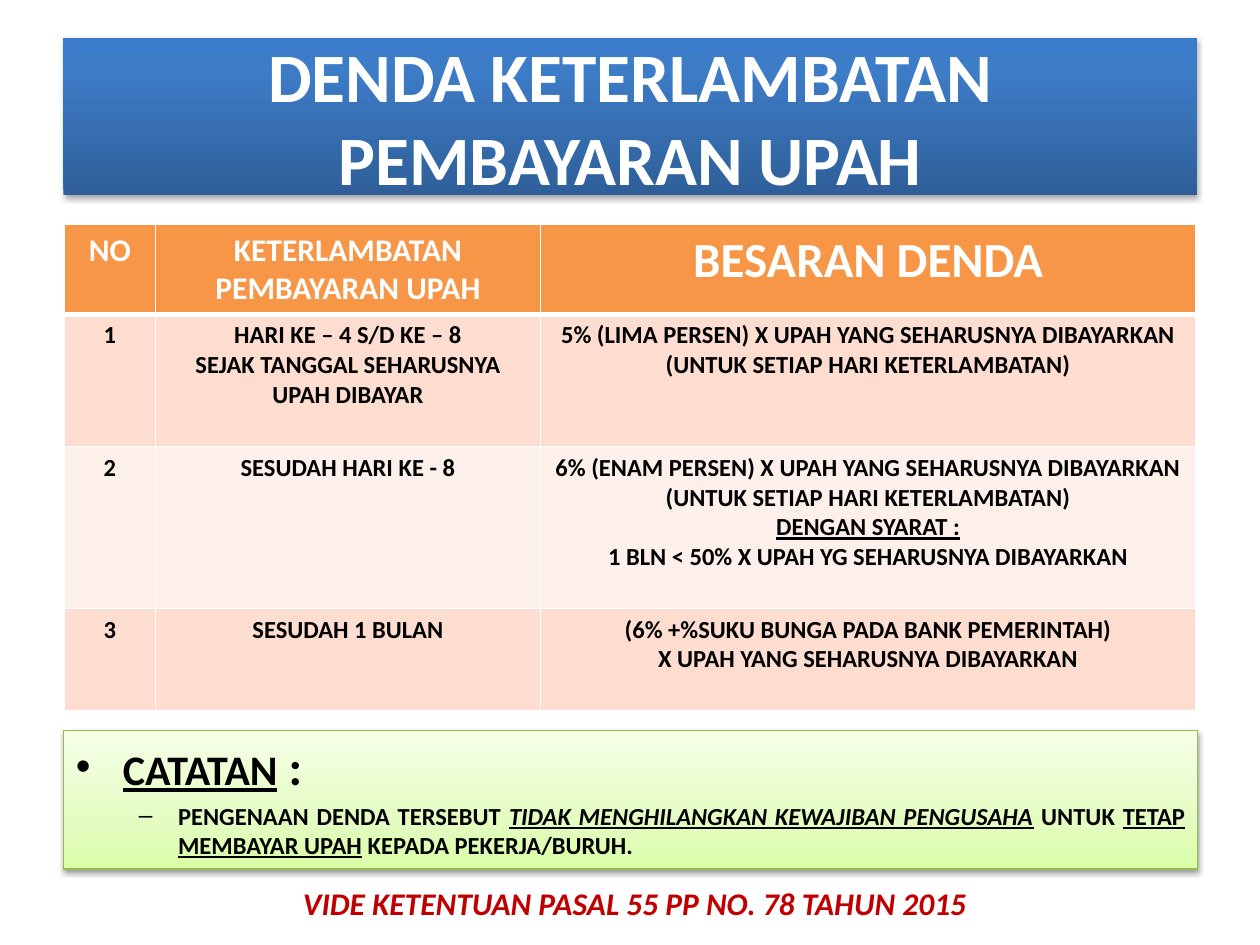
from lxml import etree
from pptx import Presentation
from pptx.dml.color import RGBColor
from pptx.enum.shapes import MSO_SHAPE
from pptx.enum.text import MSO_ANCHOR, PP_ALIGN
from pptx.oxml.ns import qn
from pptx.util import Cm, Pt

RECTANGLE = MSO_SHAPE.RECTANGLE
TOP, MIDDLE = MSO_ANCHOR.TOP, MSO_ANCHOR.MIDDLE
CENTER, JUSTIFY = PP_ALIGN.CENTER, PP_ALIGN.JUSTIFY

WHITE = RGBColor(0xFF, 0xFF, 0xFF)
BLACK = RGBColor(0x00, 0x00, 0x00)
RED = RGBColor(0xC0, 0x00, 0x00)
ORANGE = RGBColor(0xF7, 0x96, 0x46)
PEACH = RGBColor(0xFC, 0xDD, 0xCF)
PALE_PEACH = RGBColor(0xFD, 0xEF, 0xE9)
GREEN = RGBColor(0x98, 0xB9, 0x55)
TITLE_STOPS = [(0, RGBColor(0x2F, 0x5F, 0x99)), (80, RGBColor(0x3D, 0x7C, 0xC7)),
               (100, RGBColor(0x3A, 0x7C, 0xCB))]
NOTE_STOPS = [(0, RGBColor(0xDA, 0xFD, 0xA7)), (35, RGBColor(0xE4, 0xFC, 0xC2)),
              (100, RGBColor(0xF5, 0xFF, 0xE7))]


def add_run(paragraph, text, size, color, underline=False, italic=False):
    run = paragraph.add_run()
    run.text = text
    font = run.font
    font.name, font.size, font.bold = "Calibri", Pt(size), True
    font.color.rgb = color
    font.underline, font.italic = underline, italic


def add_panel(top, height, stops, opacity):
    """Rectangle with a bottom-to-top gradient and a soft shadow below."""
    shape = slide.shapes.add_shape(RECTANGLE, Cm(1.28), Cm(top), Cm(22.86), Cm(height))
    shape.fill.gradient()
    shape.fill.gradient_angle = 90
    properties = shape.element.spPr
    stop_list = properties.find(qn("a:gradFill")).find(qn("a:gsLst"))
    for old_stop in list(stop_list):
        stop_list.remove(old_stop)
    for position, color in stops:
        stop = etree.SubElement(stop_list, qn("a:gs"), pos=str(position * 1000))
        etree.SubElement(stop, qn("a:srgbClr"), val=str(color))
    shape.line.fill.background()
    shape.shadow.inherit = False
    shadow = etree.SubElement(properties.find(qn("a:effectLst")), qn("a:outerShdw"),
                              blurRad=str(Pt(3.1)), dist=str(Pt(1.7)),
                              dir="5400000", rotWithShape="0")
    shadow_color = etree.SubElement(shadow, qn("a:srgbClr"), val=str(BLACK))
    etree.SubElement(shadow_color, qn("a:alpha"), val=str(opacity * 1000))
    return shape


presentation = Presentation()
presentation.slide_width, presentation.slide_height = Cm(25.4), Cm(19.05)
slide = presentation.slides.add_slide(presentation.slide_layouts[6])

# Title
title = add_panel(0.76, 3.18, TITLE_STOPS, 35)
title.text_frame.vertical_anchor = MIDDLE
paragraph = title.text_frame.paragraphs[0]
paragraph.alignment = CENTER
add_run(paragraph, "DENDA KETERLAMBATAN PEMBAYARAN UPAH", 39.6, WHITE)

# Table of penalties: each cell is a list of paragraphs
PER_DAY = "(UNTUK SETIAP HARI KETERLAMBATAN)"
CONDITION = "DENGAN SYARAT :"
rows = [
    [["NO"], ["KETERLAMBATAN PEMBAYARAN UPAH"], ["BESARAN DENDA"]],
    [["1"], ["HARI KE – 4 S/D KE – 8", "SEJAK TANGGAL SEHARUSNYA UPAH DIBAYAR"],
     ["5% (LIMA PERSEN) X UPAH YANG SEHARUSNYA DIBAYARKAN", PER_DAY]],
    [["2"], ["SESUDAH HARI KE - 8"],
     ["6% (ENAM PERSEN) X UPAH YANG SEHARUSNYA DIBAYARKAN", PER_DAY, CONDITION,
      "1 BLN < 50% X UPAH YG SEHARUSNYA DIBAYARKAN"]],
    [["3"], ["SESUDAH 1 BULAN"],
     ["(6% +%SUKU BUNGA PADA BANK PEMERINTAH)", "X UPAH YANG SEHARUSNYA DIBAYARKAN"]],
]
column_widths = [1.83, 7.77, 13.2]
row_heights = [1.78, 2.67, 3.26, 2.06]
row_fills = [ORANGE, PEACH, PALE_PEACH, PEACH]
table = slide.shapes.add_table(4, 3, Cm(1.3), Cm(4.53), Cm(sum(column_widths)),
                               Cm(sum(row_heights))).table
table.horz_banding = False
for column, width in zip(table.columns, column_widths):
    column.width = Cm(width)
for row_index, row in enumerate(rows):
    table.rows[row_index].height = Cm(row_heights[row_index])
    border_widths = {"a:lnL": 1, "a:lnR": 1, "a:lnT": 3 if row_index == 1 else 1,
                     "a:lnB": 3 if row_index == 0 else 1}
    for column_index, lines in enumerate(row):
        cell = table.cell(row_index, column_index)
        cell_properties = cell._tc.get_or_add_tcPr()
        for side, width in border_widths.items():
            border = etree.SubElement(cell_properties, qn(side), w=str(Pt(width)))
            border_fill = etree.SubElement(border, qn("a:solidFill"))
            etree.SubElement(border_fill, qn("a:srgbClr"), val=str(WHITE))
        cell.fill.solid()
        cell.fill.fore_color.rgb = row_fills[row_index]
        size, color = 14, BLACK
        if row_index == 0:
            size, color = (28 if column_index == 2 else 18), WHITE
        text_frame = cell.text_frame
        for line_index, line in enumerate(lines):
            paragraph = text_frame.add_paragraph() if line_index else text_frame.paragraphs[0]
            paragraph.alignment = CENTER
            add_run(paragraph, line, size, color, underline=line == CONDITION)

# Note panel: level, indent, hanging, space before, bullet, runs
note = add_panel(14.73, 2.79, NOTE_STOPS, 38)
note.line.color.rgb = GREEN
note.line.width = Pt(0.75)
note.text_frame.vertical_anchor = TOP
note_paragraphs = [
    (0, 0.95, 0.95, 5.6, "•", [("CATATAN", 24, True, False), (" :", 28, False, False)]),
    (1, 2.06, 0.79, 2.8, "–", [
        ("PENGENAAN DENDA TERSEBUT ", 14, False, False),
        ("TIDAK MENGHILANGKAN KEWAJIBAN PENGUSAHA", 14, True, True),
        (" UNTUK ", 14, False, False),
        ("TETAP MEMBAYAR UPAH", 14, True, False),
        (" KEPADA PEKERJA/BURUH.", 14, False, False)]),
]
for level, indent, hanging, space, bullet, runs in note_paragraphs:
    paragraph = note.text_frame.add_paragraph() if level else note.text_frame.paragraphs[0]
    paragraph.level = level
    paragraph.alignment = JUSTIFY
    paragraph.space_before = Pt(space)
    paragraph_properties = paragraph._p.get_or_add_pPr()
    paragraph_properties.set("marL", str(Cm(indent)))
    paragraph_properties.set("indent", str(-Cm(hanging)))
    etree.SubElement(paragraph_properties, qn("a:buFont"), typeface="Arial")
    etree.SubElement(paragraph_properties, qn("a:buChar"), char=bullet)
    for text, size, underline, italic in runs:
        add_run(paragraph, text, size, BLACK, underline, italic)

# Legal reference
reference = slide.shapes.add_textbox(Cm(4.9), Cm(17.7), Cm(15.8), Cm(1.02))
reference.text_frame.word_wrap = True
paragraph = reference.text_frame.paragraphs[0]
paragraph.alignment = CENTER
add_run(paragraph, "VIDE KETENTUAN PASAL 55 PP NO. 78 TAHUN 2015", 18, RED, italic=True)

presentation.save("out.pptx")
